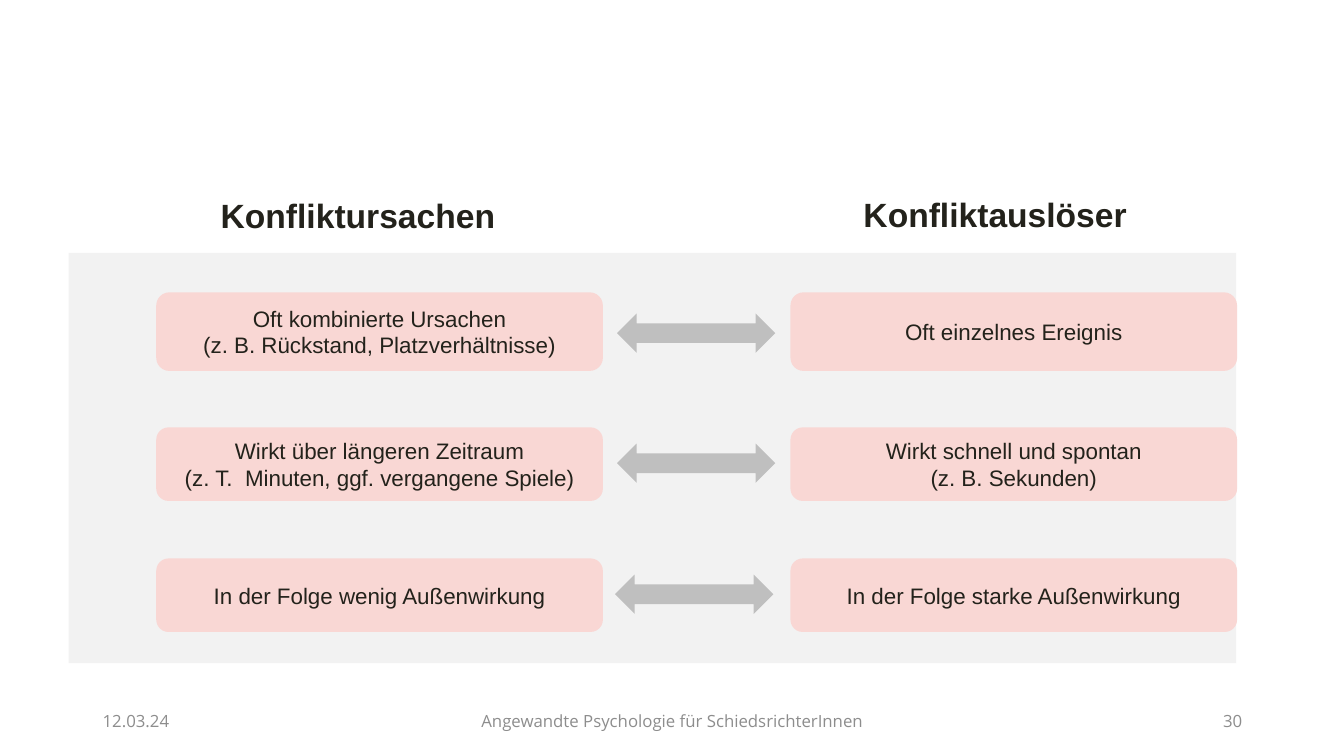
from pptx import Presentation
from pptx.dml.color import RGBColor
from pptx.enum.shapes import MSO_SHAPE as Shape
from pptx.enum.text import MSO_ANCHOR as Anchor, PP_ALIGN as Align
from pptx.util import Inches, Pt


def color(hex_value):
    return RGBColor.from_string(hex_value)


class ConflictSlide:
    """Holds the style and the current slide and draws its elements."""

    INK, MUTED = "23221B", "8D8D8D"
    PANEL, CARD, ARROW = "F2F2F2", "F9D7D4", "BFBFBF"

    def __init__(self, deck):
        self.slide = deck.slides.add_slide(deck.slide_layouts[6])

    def set_text(self, frame, text, size, ink, align=Align.CENTER,
                 font="Arial", bold=False, anchor=Anchor.MIDDLE):
        frame.word_wrap = True
        frame.vertical_anchor = anchor
        frame.text = text
        for paragraph in frame.paragraphs:
            paragraph.alignment = align
            for run in paragraph.runs:
                run.font.name = font
                run.font.size = Pt(size)
                run.font.bold = bold
                run.font.color.rgb = color(ink)

    def label(self, box, text, size, ink, **style):
        frame = self.slide.shapes.add_textbox(*map(Inches, box)).text_frame
        self.set_text(frame, text, size, ink, **style)

    def block(self, kind, box, fill):
        shape = self.slide.shapes.add_shape(kind, *map(Inches, box))
        shape.shadow.inherit = False
        shape.fill.solid()
        shape.fill.fore_color.rgb = color(fill)
        shape.line.fill.background()
        return shape

    def heading(self, left, top, text):
        self.label((left, top, 3.38, 0.5), text, 24, self.INK,
                   bold=True, anchor=Anchor.TOP)

    def footer(self, left, width, text, align):
        self.label((left, 6.95, width, 0.4), text, 12, self.MUTED,
                   align=align, font="Open Sans")

    def card(self, left, top, height, text):
        card = self.block(Shape.ROUNDED_RECTANGLE, (left, top, 4.43, height), self.CARD)
        self.set_text(card.text_frame, text, 16, self.INK)

    def contrast(self, top, height, arrow_left, arrow_top, cause, trigger):
        self.card(1.55, top, height, cause)
        self.card(7.84, top, height, trigger)
        self.block(Shape.LEFT_RIGHT_ARROW, (arrow_left, arrow_top, 1.57, 0.39), self.ARROW)


def main():
    deck = Presentation()
    deck.slide_width, deck.slide_height = Inches(13.33), Inches(7.5)
    page = ConflictSlide(deck)

    page.footer(0.92, 3, "12.03.24", Align.LEFT)
    page.footer(4.42, 4.5, "Angewandte Psychologie für SchiedsrichterInnen", Align.CENTER)
    page.footer(9.42, 3, "30", Align.RIGHT)

    page.block(Shape.RECTANGLE, (0.68, 2.51, 11.58, 4.07), page.PANEL)
    page.heading(1.86, 1.88, "Konfliktursachen")
    page.heading(8.18, 1.87, "Konfliktauslöser")

    contrasts = [
        (2.9, 0.78, 6.12, 3.11,
         "Oft kombinierte Ursachen\n(z. B. Rückstand, Platzverhältnisse)",
         "Oft einzelnes Ereignis"),
        (4.24, 0.73, 6.12, 4.4,
         "Wirkt über längeren Zeitraum\v(z. T.  Minuten, ggf. vergangene Spiele)",
         "Wirkt schnell und spontan\v(z. B. Sekunden)"),
        (5.54, 0.73, 6.1, 5.7,
         "In der Folge wenig Außenwirkung",
         "In der Folge starke Außenwirkung"),
    ]
    for contrast in contrasts:
        page.contrast(*contrast)

    deck.save("out.pptx")


if __name__ == "__main__":
    main()
